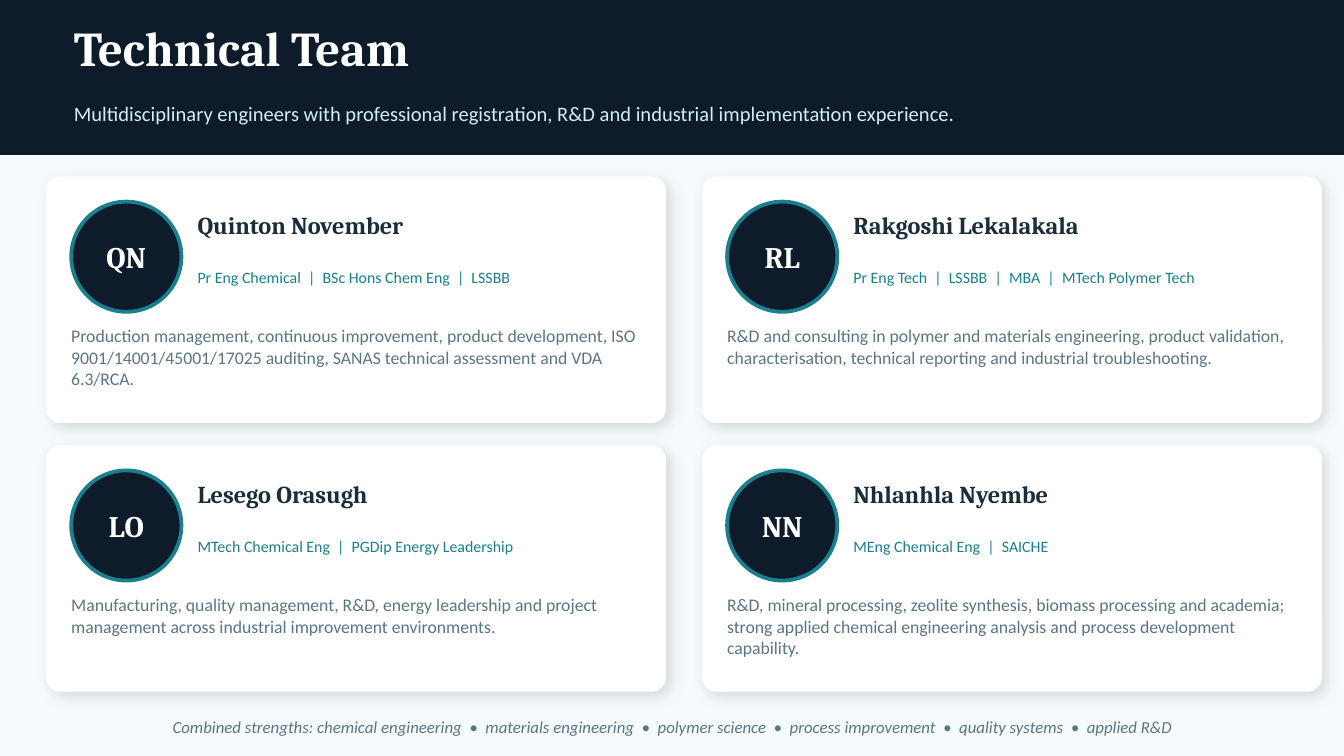
"""Build the Technical Team slide with four profile cards."""
from dataclasses import dataclass

from lxml import etree
from pptx import Presentation
from pptx.dml.color import RGBColor
from pptx.enum.shapes import MSO_SHAPE
from pptx.enum.text import MSO_ANCHOR, PP_ALIGN
from pptx.oxml.ns import qn
from pptx.shapes.autoshape import Shape
from pptx.slide import Slide
from pptx.util import Inches, Pt

RECTANGLE = MSO_SHAPE.RECTANGLE
ROUNDED = MSO_SHAPE.ROUNDED_RECTANGLE
OVAL = MSO_SHAPE.OVAL
TOP, MIDDLE = MSO_ANCHOR.TOP, MSO_ANCHOR.MIDDLE
LEFT, CENTER = PP_ALIGN.LEFT, PP_ALIGN.CENTER

NAVY = RGBColor(0x0D, 0x1B, 0x2A)
TEAL = RGBColor(0x1A, 0x7F, 0x8E)
INK = RGBColor(0x1A, 0x2E, 0x3A)
SLATE = RGBColor(0x5A, 0x76, 0x85)
ICE = RGBColor(0xD4, 0xED, 0xF4)
PALE = RGBColor(0xF5, 0xFA, 0xFC)
WHITE = RGBColor(0xFF, 0xFF, 0xFF)

SLIDE_WIDTH = 10
SLIDE_HEIGHT = SLIDE_WIDTH * 9 / 16
CARD_LEFT, CARD_TOP = 0.35, 1.32
CARD_WIDTH, CARD_HEIGHT = 4.6, 1.82
COLUMN_STEP, ROW_STEP = 4.88, 2.0
PADDING, BADGE_SIZE = 0.18, 0.82


@dataclass(frozen=True)
class Box:
    left: float
    top: float
    width: float
    height: float


@dataclass(frozen=True)
class Style:
    font: str
    size: float
    color: RGBColor
    bold: bool = False
    italic: bool = False
    align: PP_ALIGN = LEFT
    anchor: MSO_ANCHOR = MIDDLE


@dataclass(frozen=True)
class Member:
    initials: str
    name: str
    credentials: tuple[str, ...]
    experience: str


TITLE = Style("Cambria", 26, WHITE, bold=True)
SUBTITLE = Style("Calibri", 11, ICE)
INITIALS = Style("Cambria", 16, WHITE, bold=True, align=CENTER)
NAME = Style("Cambria", 13, INK, bold=True)
CREDENTIALS = Style("Calibri", 8.5, TEAL)
EXPERIENCE = Style("Calibri", 9.5, SLATE, anchor=TOP)
FOOTER = Style("Calibri", 9, SLATE, italic=True, align=CENTER)

TEAM = (
    Member("QN", "Quinton November",
           ("Pr Eng Chemical", "BSc Hons Chem Eng", "LSSBB"),
           "Production management, continuous improvement, product development, "
           "ISO 9001/14001/45001/17025 auditing, SANAS technical assessment and VDA 6.3/RCA."),
    Member("RL", "Rakgoshi Lekalakala",
           ("Pr Eng Tech", "LSSBB", "MBA", "MTech Polymer Tech"),
           "R&D and consulting in polymer and materials engineering, product validation, "
           "characterisation, technical reporting and industrial troubleshooting."),
    Member("LO", "Lesego Orasugh",
           ("MTech Chemical Eng", "PGDip Energy Leadership"),
           "Manufacturing, quality management, R&D, energy leadership and project "
           "management across industrial improvement environments."),
    Member("NN", "Nhlanhla Nyembe",
           ("MEng Chemical Eng", "SAICHE"),
           "R&D, mineral processing, zeolite synthesis, biomass processing and academia; "
           "strong applied chemical engineering analysis and process development capability."),
)
STRENGTHS = ("chemical engineering", "materials engineering", "polymer science",
             "process improvement", "quality systems", "applied R&D")


def add_panel(slide: Slide, kind: MSO_SHAPE, box: Box, fill: RGBColor,
              outline: RGBColor, outline_width: float = 1) -> Shape:
    panel = slide.shapes.add_shape(kind, Inches(box.left), Inches(box.top),
                                   Inches(box.width), Inches(box.height))
    panel.shadow.inherit = False
    panel.fill.solid()
    panel.fill.fore_color.rgb = fill
    panel.line.color.rgb = outline
    panel.line.width = Pt(outline_width)
    return panel


def add_label(slide: Slide, box: Box, text: str, style: Style) -> None:
    label = slide.shapes.add_textbox(Inches(box.left), Inches(box.top),
                                     Inches(box.width), Inches(box.height))
    frame = label.text_frame
    frame.word_wrap = True
    frame.vertical_anchor = style.anchor
    frame.margin_left = frame.margin_right = Inches(0)
    frame.margin_top = frame.margin_bottom = Inches(0)
    paragraph = frame.paragraphs[0]
    paragraph.alignment = style.align
    run = paragraph.add_run()
    run.text = text
    run.font.name = style.font
    run.font.size = Pt(style.size)
    run.font.bold = style.bold
    run.font.italic = style.italic
    run.font.color.rgb = style.color


def add_soft_shadow(card: Shape) -> None:
    effects = card.element.spPr.find(qn("a:effectLst"))
    shadow = etree.SubElement(effects, qn("a:outerShdw"), blurRad=str(Pt(8)),
                              dist=str(Pt(3)), dir=str(45 * 60000),
                              algn="bl", rotWithShape="0")
    color = etree.SubElement(shadow, qn("a:srgbClr"), val="000000")
    etree.SubElement(color, qn("a:alpha"), val="12000")


def add_member_card(slide: Slide, member: Member, left: float, top: float) -> None:
    card = add_panel(slide, ROUNDED, Box(left, top, CARD_WIDTH, CARD_HEIGHT), WHITE, WHITE)
    card.adjustments[0] = 0.055
    add_soft_shadow(card)

    inner_left, inner_top = left + PADDING, top + PADDING
    name_left = left + 1.12
    badge = Box(inner_left, inner_top, BADGE_SIZE, BADGE_SIZE)
    add_panel(slide, OVAL, badge, NAVY, TEAL, 2)
    add_label(slide, badge, member.initials, INITIALS)
    add_label(slide, Box(name_left, inner_top, 3.3, 0.35), member.name, NAME)
    add_label(slide, Box(name_left, top + 0.55, 3.3, 0.38),
              "  |  ".join(member.credentials), CREDENTIALS)
    add_label(slide, Box(inner_left, top + 1.1, 4.25, 0.62), member.experience, EXPERIENCE)


def main() -> None:
    deck = Presentation()
    deck.slide_width, deck.slide_height = Inches(SLIDE_WIDTH), Inches(SLIDE_HEIGHT)
    slide = deck.slides.add_slide(deck.slide_layouts[6])
    slide.background.fill.solid()
    slide.background.fill.fore_color.rgb = PALE

    add_panel(slide, RECTANGLE, Box(0, 0, SLIDE_WIDTH, 1.15), NAVY, NAVY)
    add_label(slide, Box(0.55, 0.05, 7, 0.6), "Technical Team", TITLE)
    add_label(slide, Box(0.55, 0.65, 8.5, 0.38),
              "Multidisciplinary engineers with professional registration, "
              "R&D and industrial implementation experience.", SUBTITLE)

    for index, member in enumerate(TEAM):
        row, column = divmod(index, 2)
        add_member_card(slide, member, CARD_LEFT + column * COLUMN_STEP,
                        CARD_TOP + row * ROW_STEP)

    add_label(slide, Box(0.35, 5.27, 9.3, 0.28),
              "Combined strengths: " + "  •  ".join(STRENGTHS), FOOTER)
    deck.save("out.pptx")


if __name__ == "__main__":
    main()
